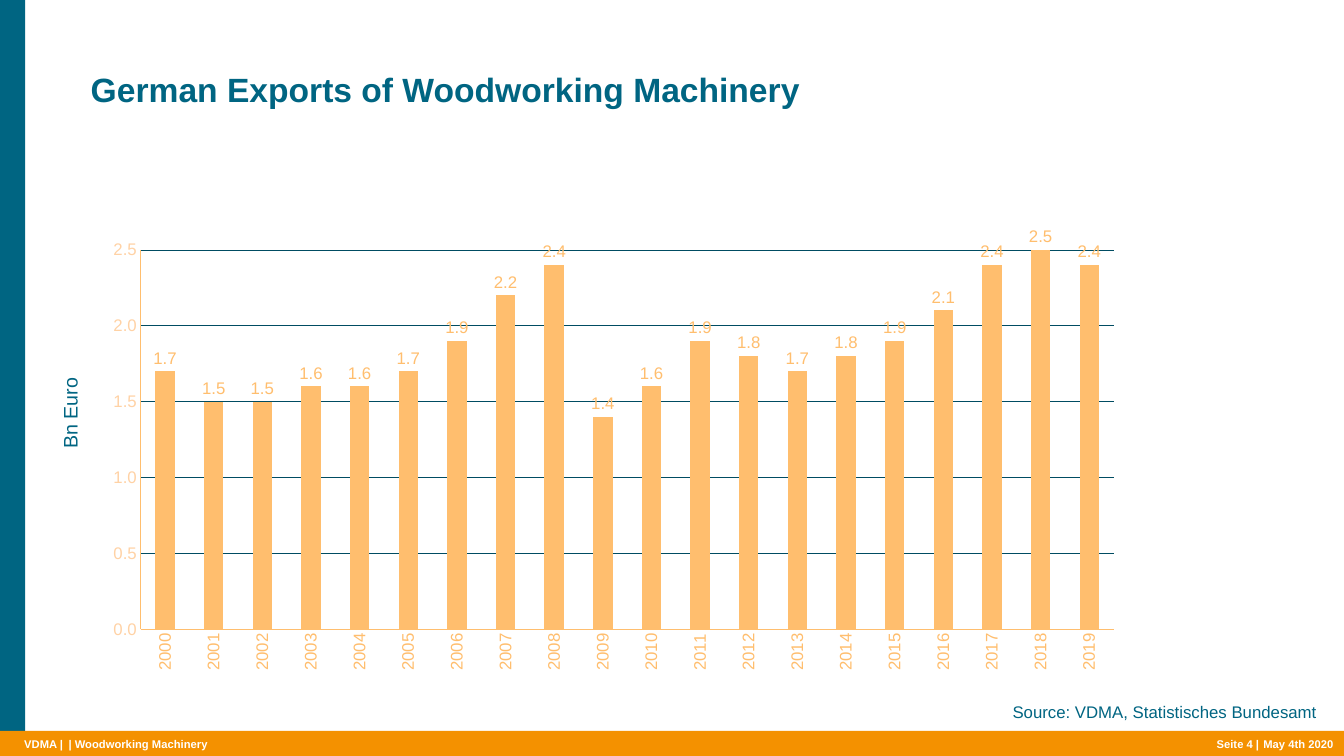
from dataclasses import dataclass

from lxml import etree
from pptx import Presentation
from pptx.chart.data import CategoryChartData
from pptx.dml.color import RGBColor
from pptx.enum.chart import XL_CHART_TYPE, XL_LABEL_POSITION, XL_TICK_MARK
from pptx.enum.shapes import MSO_SHAPE
from pptx.enum.text import MSO_ANCHOR, MSO_AUTO_SIZE, PP_ALIGN
from pptx.oxml.ns import qn
from pptx.util import Inches, Pt

COLUMNS = XL_CHART_TYPE.COLUMN_CLUSTERED
OUTSIDE_END = XL_LABEL_POSITION.OUTSIDE_END
NO_TICK = XL_TICK_MARK.NONE
RECTANGLE = MSO_SHAPE.RECTANGLE
TOP, MIDDLE = MSO_ANCHOR.TOP, MSO_ANCHOR.MIDDLE
FIT_SHAPE, NO_FIT = MSO_AUTO_SIZE.SHAPE_TO_FIT_TEXT, MSO_AUTO_SIZE.NONE
LEFT, CENTER, RIGHT = PP_ALIGN.LEFT, PP_ALIGN.CENTER, PP_ALIGN.RIGHT
TITLE_ONLY = 5


@dataclass(frozen=True)
class Theme:
    """Colours, font and type sizes of the slide."""
    teal: str = "006582"
    orange: str = "F49100"
    bar: str = "FFBE6E"
    scale: str = "FFD2A5"
    grid: str = "004C62"
    white: str = "FFFFFF"
    font: str = "Arial"
    title: int = 24
    axis_title: int = 14
    body: int = 12
    footer: int = 8


THEME = Theme()
WIDTH, HEIGHT = 13.33, 7.5
BAND = 0.25
EXPORTS = [1.7, 1.5, 1.5, 1.6, 1.6, 1.7, 1.9, 2.2, 2.4, 1.4,
           1.6, 1.9, 1.8, 1.7, 1.8, 1.9, 2.1, 2.4, 2.5, 2.4]
YEARS = [str(2000 + offset) for offset in range(len(EXPORTS))]


def style_font(font, size, color, bold=False):
    """Apply the theme font with a size and colour."""
    font.name, font.size, font.bold = THEME.font, Pt(size), bold
    font.color.rgb = RGBColor.from_string(color)


def style_line(line, color, width):
    """Give a line a colour and a width in points."""
    line.color.rgb = RGBColor.from_string(color)
    line.width = Pt(width)


def write_text(shape, text, size=THEME.body, color=THEME.teal, bold=False,
               align=LEFT, anchor=TOP, wrap=True, inset=True, fit=FIT_SHAPE):
    """Fill a shape with one formatted paragraph."""
    frame = shape.text_frame
    frame.text = text
    frame.word_wrap, frame.auto_size = wrap, fit
    frame.vertical_anchor = anchor
    if not inset:
        frame.margin_left = frame.margin_right = 0
        frame.margin_top = frame.margin_bottom = 0
    paragraph = frame.paragraphs[0]
    paragraph.alignment = align
    style_font(paragraph.runs[0].font, size, color, bold)


def add_text(slide, box, text, **style):
    """Add a text box at the given box."""
    shape = slide.shapes.add_textbox(*map(Inches, box))
    write_text(shape, text, **style)
    return shape


def add_band(slide, box, color):
    """Add a plain coloured rectangle."""
    band = slide.shapes.add_shape(RECTANGLE, *map(Inches, box))
    band.shadow.inherit = False
    band.fill.solid()
    band.fill.fore_color.rgb = RGBColor.from_string(color)
    band.line.fill.background()


def add_title(slide, box, text):
    """Place and format the title placeholder."""
    title = slide.shapes.title
    title.left, title.top, title.width, title.height = map(Inches, box)
    write_text(title, text, size=THEME.title, bold=True, inset=False, fit=NO_FIT)


def add_footer(slide, box):
    """Draw the footer band with its four texts."""
    left, top, width, height = box
    add_band(slide, box, THEME.orange)
    right = left + width
    entries = [
        (left + 0.24, 0.39, "VDMA |", LEFT, False),
        (left + 0.68, 3.85, "| Woodworking Machinery", LEFT, True),
        (right - 1.27, 0.43, "Seite 4 |", RIGHT, False),
        (right - 0.8, 0.78, "May 4th 2020", LEFT, True),
    ]
    for text_left, text_width, text, align, wrap in entries:
        add_text(slide, (text_left, top + 0.07, text_width, 0.13), text,
                 size=THEME.footer, color=THEME.white, bold=True, align=align,
                 anchor=MIDDLE, wrap=wrap, inset=False)


def set_plot_layout(chart, box):
    """Fix the inner plot area as fractions of the chart."""
    plot_area = chart.plots[0]._element.getparent()
    layout = plot_area.find(qn("c:layout"))
    if layout is None:
        layout = etree.Element(qn("c:layout"))
        plot_area.insert(0, layout)
    manual = etree.SubElement(layout, qn("c:manualLayout"))
    settings = [("layoutTarget", "inner"), ("xMode", "edge"), ("yMode", "edge")]
    settings += zip("xywh", map(str, box))
    for tag, value in settings:
        etree.SubElement(manual, qn(f"c:{tag}")).set("val", value)


def format_axis(axis, color):
    """Style an axis without tick marks."""
    axis.major_tick_mark = axis.minor_tick_mark = NO_TICK
    style_font(axis.tick_labels.font, THEME.body, color)
    style_line(axis.format.line, THEME.bar, 0.75)


def add_exports_chart(slide, box):
    """Draw the column chart of exports with its rotated axis caption."""
    left, top, width, height = box
    data = CategoryChartData(number_format="0.0")
    data.categories = YEARS
    data.add_series("Series 1", EXPORTS)
    chart = slide.shapes.add_chart(COLUMNS, *map(Inches, box), data).chart
    chart.has_legend = chart.has_title = False
    style_font(chart.font, THEME.body, THEME.orange)
    set_plot_layout(chart, (0.038, 0.097, 0.926, 0.798))

    years, scale = chart.category_axis, chart.value_axis
    format_axis(years, THEME.bar)
    format_axis(scale, THEME.scale)
    years._element.find(qn("c:txPr")).find(qn("a:bodyPr")).set("rot", "-5400000")
    scale.minimum_scale, scale.maximum_scale, scale.major_unit = 0, 2.5, 0.5
    scale.tick_labels.number_format = "0.0"
    scale.tick_labels.number_format_is_linked = False
    scale.has_major_gridlines = True
    style_line(scale.major_gridlines.format.line, THEME.grid, 0.25)

    plot = chart.plots[0]
    plot.gap_width, plot.vary_by_categories = 150, False
    series = plot.series[0]
    series.format.fill.solid()
    series.format.fill.fore_color.rgb = RGBColor.from_string(THEME.bar)
    labels = series.data_labels
    labels.show_value, labels.position = True, OUTSIDE_END
    labels.number_format, labels.number_format_is_linked = "#,##0.0", False
    style_font(labels.font, THEME.body, THEME.bar)

    caption = add_text(slide, (left - 1.21, top + 1.91, 1.81, 0.34), "Bn Euro",
                       size=THEME.axis_title, align=CENTER)
    caption.rotation = 270


def build_exports_slide(presentation):
    """Build the slide on German woodworking machinery exports."""
    slide = presentation.slides.add_slide(presentation.slide_layouts[TITLE_ONLY])
    add_band(slide, (0, 0, BAND, HEIGHT), THEME.teal)
    add_footer(slide, (0, HEIGHT - BAND, WIDTH, BAND))
    add_title(slide, (0.9, 0.68, 10.82, 0.81), "German Exports of Woodworking Machinery")
    add_exports_chart(slide, (1, 2.02, 10.42, 4.72))
    add_text(slide, (9.42, 6.91, 3.74, 0.3), "Source: VDMA, Statistisches Bundesamt",
             align=RIGHT)


def main():
    """Create and save the presentation."""
    presentation = Presentation()
    presentation.slide_width, presentation.slide_height = Inches(WIDTH), Inches(HEIGHT)
    build_exports_slide(presentation)
    presentation.save("out.pptx")


if __name__ == "__main__":
    main()
